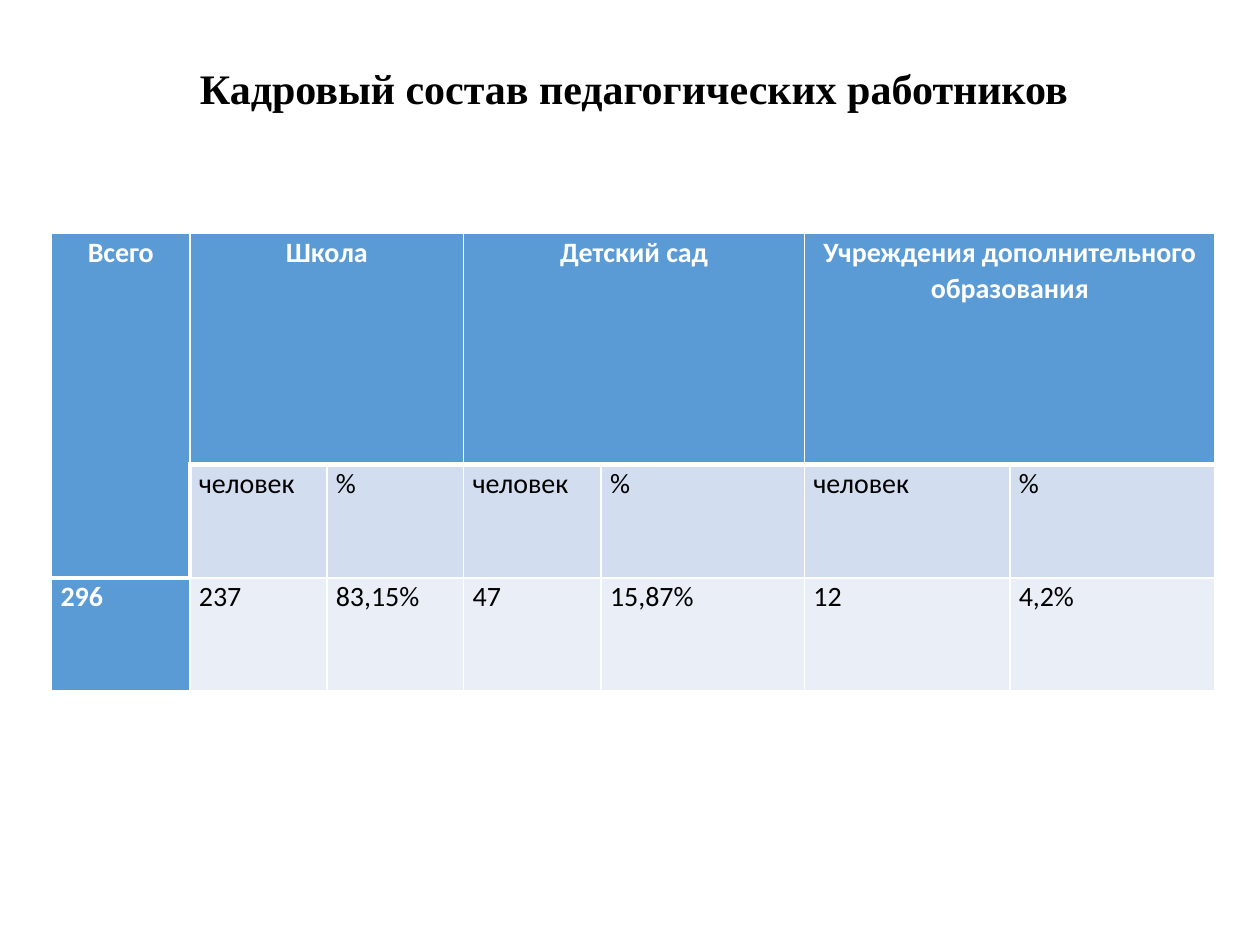
"""Build a slide with a table of teaching staff by type of institution."""
from lxml import etree
from pptx import Presentation
from pptx.dml.color import RGBColor
from pptx.enum.text import MSO_ANCHOR, PP_ALIGN
from pptx.oxml.ns import qn
from pptx.util import Cm, Pt

CENTER, LEFT = PP_ALIGN.CENTER, PP_ALIGN.LEFT
MIDDLE = MSO_ANCHOR.MIDDLE

THEME = {
    "header": "5B9BD5", "band": ("D2DEEF", "EAEFF7"),
    "white": "FFFFFF", "black": "000000",
    "title": {"name": "Times New Roman", "size": Pt(24), "bold": True},
    "head": {"name": "Calibri", "size": Pt(16), "bold": True},
    "body": {"name": "Calibri", "size": Pt(16), "bold": False},
}
THIN, THICK = 1, 3


def write(p, text, fmt, color, align, spacing):
    p.alignment, p.line_spacing = align, spacing
    r = p.add_run()
    r.text = text
    for key, value in fmt.items():
        setattr(r.font, key, value)
    r.font.color.rgb = RGBColor.from_string(color)


def add_borders(cell, widths):
    tc_pr = cell._tc.get_or_add_tcPr()
    for side, width in widths.items():
        ln = etree.SubElement(tc_pr, qn(f"a:ln{side}"), w=str(Pt(width)))
        fill = etree.SubElement(ln, qn("a:solidFill"))
        etree.SubElement(fill, qn("a:srgbClr"), val=THEME["white"])


prs = Presentation()
prs.slide_width, prs.slide_height = Cm(25.4), Cm(19.05)
s = prs.slides.add_slide(prs.slide_layouts[5])

title = s.shapes.title
title.left, title.top, title.width, title.height = Cm(1.83), Cm(0.33), Cm(21.9), Cm(3)
tf = title.text_frame
tf.vertical_anchor = MIDDLE
write(tf.paragraphs[0], "Кадровый состав педагогических работников",
      THEME["title"], THEME["black"], CENTER, 0.9)

rows = [
    ["Всего", "Школа", "", "Детский сад", "", "Учреждения дополнительного образования", ""],
    [""] + ["человек", "%"] * 3,
    ["296", "237", "83,15%", "47", "15,87%", "12", "4,2%"],
]
col_widths = [2.79, 2.76, 2.76, 2.77, 4.1, 4.14, 4.14]
row_heights = [4.67, 2.28, 2.28]

table = s.shapes.add_table(len(rows), len(col_widths), Cm(1.04), Cm(4.7),
                           Cm(sum(col_widths)), Cm(sum(row_heights))).table
for col, width in zip(table.columns, col_widths):
    col.width = Cm(width)
for row, height in zip(table.rows, row_heights):
    row.height = Cm(height)

table.cell(0, 0).merge(table.cell(1, 0))
for j in (1, 3, 5):
    table.cell(0, j).merge(table.cell(0, j + 1))

for i, texts in enumerate(rows):
    for j, text in enumerate(texts):
        cell = table.cell(i, j)
        is_head = i == 0 or j == 0
        cell.margin_left = cell.margin_right = Cm(0.18)
        cell.margin_top = cell.margin_bottom = Cm(0)
        add_borders(cell, {
            "L": THICK if (i, j) == (1, 1) else THIN,
            "R": THICK if (i, j) == (1, 0) else THIN,
            "T": THICK if i == 1 or (i, j) == (2, 0) else THIN,
            "B": THICK if i == 0 or (i, j) == (1, 0) else THIN,
        })
        cell.fill.solid()
        color = THEME["header"] if is_head else THEME["band"][i - 1]
        cell.fill.fore_color.rgb = RGBColor.from_string(color)
        if text:
            write(cell.text_frame.paragraphs[0], text,
                  THEME["head" if is_head else "body"],
                  THEME["white" if is_head else "black"],
                  CENTER if i == 0 else LEFT, 1.07)

prs.save("out.pptx")
